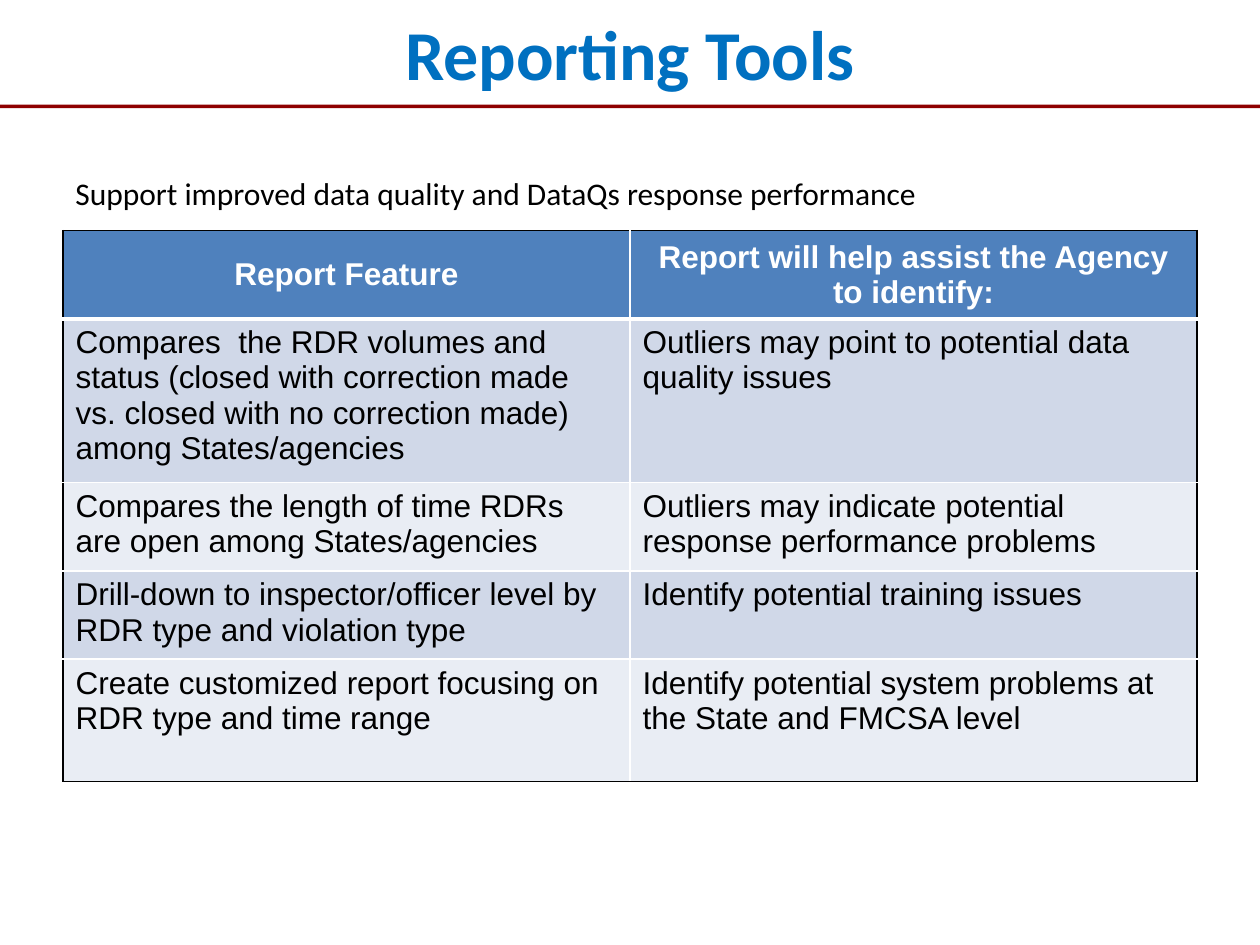
from lxml.etree import SubElement
from pptx import Presentation
from pptx.dml.color import RGBColor
from pptx.enum.shapes import MSO_SHAPE
from pptx.enum.text import MSO_ANCHOR, PP_ALIGN
from pptx.oxml.ns import qn
from pptx.util import Inches, Pt

BLACK, WHITE = "000000", "FFFFFF"
HEADER_FILL, BAND_FILLS = "4F81BD", ("D0D8E8", "E9EDF4")
ROW_HEIGHTS = (0.7, 1.22, 0.66, 0.69, 0.97)
ROWS = (
    ("Report Feature", "Report will help assist the Agency to identify:"),
    ("Compares  the RDR volumes and status (closed with correction made vs. "
     "closed with no correction made) among States/agencies",
     "Outliers may point to potential data quality issues"),
    ("Compares the length of time RDRs are open among States/agencies",
     "Outliers may indicate potential response performance problems"),
    ("Drill-down to inspector/officer level by RDR type and violation type",
     "Identify potential training issues"),
    ("Create customized report focusing on RDR type and time range",
     "Identify potential system problems at the State and FMCSA level"),
)


def color(value):
    return RGBColor.from_string(value)


def write(frame, text, size, font, ink, bold=False, align=PP_ALIGN.LEFT):
    paragraph = frame.paragraphs[0]
    paragraph.alignment = align
    span = paragraph.add_run()
    span.text = text
    span.font.size = Pt(size)
    span.font.name = font
    span.font.bold = bold
    span.font.color.rgb = color(ink)


def add_text(page, left, top, width, height, anchor, *text, **style):
    box = page.shapes.add_textbox(
        Inches(left), Inches(top), Inches(width), Inches(height))
    box.text_frame.word_wrap = True
    box.text_frame.vertical_anchor = anchor
    write(box.text_frame, *text, **style)


def add_rule(page):
    rule = page.shapes.add_shape(
        MSO_SHAPE.RECTANGLE, Inches(0), Inches(0.83), Inches(10), Inches(0.03))
    rule.shadow.inherit = False
    rule.fill.solid()
    rule.fill.fore_color.rgb = color("8E0000")
    rule.line.fill.background()


def set_border(cell, side, ink, width):
    properties = cell._tc.get_or_add_tcPr()
    line = SubElement(properties, qn(f"a:ln{side}"), w=str(Pt(width)))
    fill = SubElement(line, qn("a:solidFill"))
    SubElement(fill, qn("a:srgbClr"), val=ink)


def style_cell(cell, row, column):
    last_row, last_column = len(ROWS) - 1, len(ROWS[0]) - 1
    outer = {"L": column == 0, "R": column == last_column,
             "T": row == 0, "B": row == last_row}
    for side, is_outer in outer.items():
        under_header = (row, side) in ((0, "B"), (1, "T"))
        set_border(cell, side, BLACK if is_outer else WHITE,
                   3 if under_header else 1)
    cell.fill.solid()
    fill = HEADER_FILL if row == 0 else BAND_FILLS[(row - 1) % 2]
    cell.fill.fore_color.rgb = color(fill)


def add_report_table(page):
    table = page.shapes.add_table(
        len(ROWS), len(ROWS[0]), Inches(0.5), Inches(1.83), Inches(9),
        Inches(sum(ROW_HEIGHTS))).table
    for row, (texts, height) in enumerate(zip(ROWS, ROW_HEIGHTS)):
        table.rows[row].height = Inches(height)
        for column, text in enumerate(texts):
            cell = table.cell(row, column)
            style_cell(cell, row, column)
            if row == 0:
                cell.vertical_anchor = MSO_ANCHOR.MIDDLE
                write(cell.text_frame, text, 18, "Arial", WHITE,
                      bold=True, align=PP_ALIGN.CENTER)
            else:
                write(cell.text_frame, text, 18, "Arial", BLACK)


def main():
    deck = Presentation()
    deck.slide_width, deck.slide_height = Inches(10), Inches(7.5)
    page = deck.slides.add_slide(deck.slide_layouts[6])
    add_rule(page)
    add_text(page, 0.21, 0, 9.58, 0.83, MSO_ANCHOR.MIDDLE, "Reporting Tools",
             40, "Calibri", "0070C0", bold=True, align=PP_ALIGN.CENTER)
    add_report_table(page)
    add_text(page, 0.5, 1.33, 9, 0.4, MSO_ANCHOR.TOP,
             "Support improved data quality and DataQs response performance",
             18, "Calibri", BLACK)
    deck.save("out.pptx")


if __name__ == "__main__":
    main()
